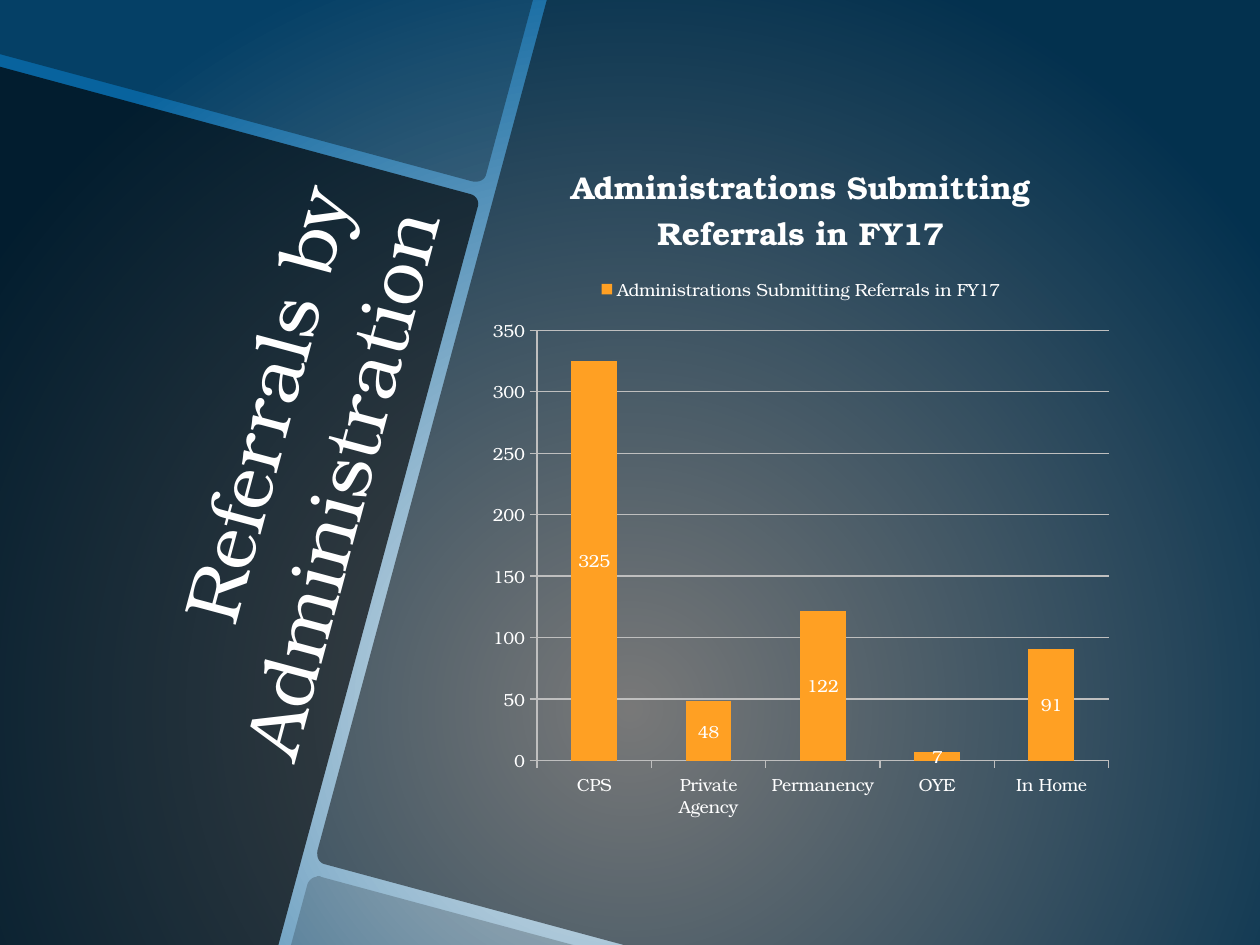
from lxml.etree import SubElement
from pptx import Presentation
from pptx.chart.data import CategoryChartData
from pptx.dml.color import RGBColor
from pptx.enum.chart import XL_CHART_TYPE, XL_LABEL_POSITION, XL_LEGEND_POSITION, XL_TICK_MARK
from pptx.enum.text import MSO_ANCHOR, PP_ALIGN
from pptx.oxml import parse_xml
from pptx.oxml.ns import nsdecls, qn
from pptx.util import Pt

TITLE = "Referrals by Administration"
CHART_TITLE = "Administrations Submitting Referrals in FY17"
REFERRALS = {"CPS": 325, "Private Agency": 48, "Permanency": 122, "OYE": 7, "In Home": 91}
FONT = "TeX Gyre Bonum"
COLORS = {"text": "FFFFFF", "bar": "FFA023", "grid": "BFBFBF", "panel": "000000",
          "glow": "F2F2F2", "edge": "08639E"}

# Panels: opacity in percent, then points in inches; a 6-tuple is a curve
PANELS = [
    (70, [(0, 0.53), (3.73, 1.54), (3.78, 1.55, 3.81, 1.6, 3.79, 1.65), (2.21, 7.5), (0, 7.5)]),
    (35, [(0, 0), (4.23, 0), (3.86, 1.38), (3.85, 1.43, 3.8, 1.45, 3.75, 1.44), (0, 0.43)]),
    (20, [(2.51, 6.96), (2.52, 6.95, 2.54, 6.95, 2.55, 6.96), (4.55, 7.5), (2.31, 7.5),
          (2.44, 7.02), (2.45, 6.99, 2.48, 6.96, 2.51, 6.96)]),
    (50, [(4.34, 0), (10, 0), (10, 7.5), (4.95, 7.5), (2.58, 6.86),
          (2.53, 6.85, 2.51, 6.8, 2.52, 6.75)]),
]
CURVE_STEPS = 8
UNITS = 7200  # hundredths of a point per inch


def rgb(name):
    return RGBColor.from_string(COLORS[name])


def style(font, size, bold=False):
    font.name, font.size, font.bold = FONT, Pt(size), bold
    font.color.rgb = rgb("text")


def outline(points):
    """Flatten the curves into short straight steps."""
    flat = []
    for point in points:
        if len(point) == 2:
            flat.append(point)
            continue
        ctrl = [flat[-1], point[:2], point[2:4], point[4:]]
        for i in range(1, CURVE_STEPS + 1):
            t = i / CURVE_STEPS
            weights = ((1 - t) ** 3, 3 * t * (1 - t) ** 2, 3 * t ** 2 * (1 - t), t ** 3)
            flat.append(tuple(sum(w * c[k] for w, c in zip(weights, ctrl)) for k in (0, 1)))
    return [(round(x * UNITS), round(y * UNITS)) for x, y in flat]


prs = Presentation()
prs.slide_width, prs.slide_height = Pt(720), Pt(540)
s = prs.slides.add_slide(prs.slide_layouts[6])

# Background glow
s.element.cSld.insert(0, parse_xml(
    f'<p:bg {nsdecls("p", "a")}><p:bgPr><a:gradFill rotWithShape="1"><a:gsLst>'
    f'<a:gs pos="0"><a:srgbClr val="{COLORS["glow"]}"/></a:gs>'
    f'<a:gs pos="100000"><a:srgbClr val="{COLORS["edge"]}"/></a:gs></a:gsLst>'
    '<a:path path="circle"><a:fillToRect l="50000" t="50000" r="50000" b="0"/></a:path>'
    '</a:gradFill><a:effectLst/></p:bgPr></p:bg>'))

# Tilted panels
for opacity, points in PANELS:
    start, *rest = outline(points)
    builder = s.shapes.build_freeform(*start, scale=Pt(0.01))
    builder.add_line_segments(rest)
    sp = builder.convert_to_shape()
    sp.shadow.inherit = False
    sp.line.fill.background()
    sp.fill.solid()
    sp.fill.fore_color.rgb = rgb("panel")
    color = sp.element.spPr.find(qn("a:solidFill")).find(qn("a:srgbClr"))
    SubElement(color, qn("a:alpha")).set("val", str(opacity * 1000))

# Slanted title
sp = s.shapes.add_textbox(Pt(-49.7), Pt(230.4), Pt(398.9), Pt(133.2))
sp.rotation = 285
tf = sp.text_frame
tf.word_wrap = True
tf.vertical_anchor = MSO_ANCHOR.BOTTOM
tf.text = TITLE
p = tf.paragraphs[0]
p.alignment = PP_ALIGN.RIGHT
style(p.runs[0].font, 44)

# Chart
data = CategoryChartData()
data.categories = list(REFERRALS)
data.add_series(CHART_TITLE, list(REFERRALS.values()))
chart = s.shapes.add_chart(XL_CHART_TYPE.COLUMN_STACKED, Pt(274.3), Pt(75.6),
                           Pt(366.5), Pt(399.6), data).chart
style(chart.font, 10)
chart.has_title = True
tf = chart.chart_title.text_frame
tf.text = CHART_TITLE
style(tf.paragraphs[0].runs[0].font, 18, True)
chart.chart_title.include_in_layout = False
chart.has_legend = True
chart.legend.position = XL_LEGEND_POSITION.TOP
chart.legend.include_in_layout = False
style(chart.legend.font, 10)

plot = chart.plots[0]
plot.gap_width, plot.overlap = 150, 100
plot.vary_by_categories = False
series = plot.series[0]
series.format.fill.solid()
series.format.fill.fore_color.rgb = rgb("bar")
labels = series.data_labels
labels.show_value = True
labels.position = XL_LABEL_POSITION.CENTER
style(labels.font, 10)

# Axes and gridlines
value_axis = chart.value_axis
value_axis.minimum_scale, value_axis.maximum_scale, value_axis.major_unit = 0, 350, 50
value_axis.has_major_gridlines = True
for axis in (chart.category_axis, value_axis):
    axis.major_tick_mark = XL_TICK_MARK.OUTSIDE
    style(axis.tick_labels.font, 10)
for part in (chart.category_axis, value_axis, value_axis.major_gridlines):
    part.format.line.color.rgb = rgb("grid")
    part.format.line.width = Pt(0.75)

prs.save("out.pptx")
